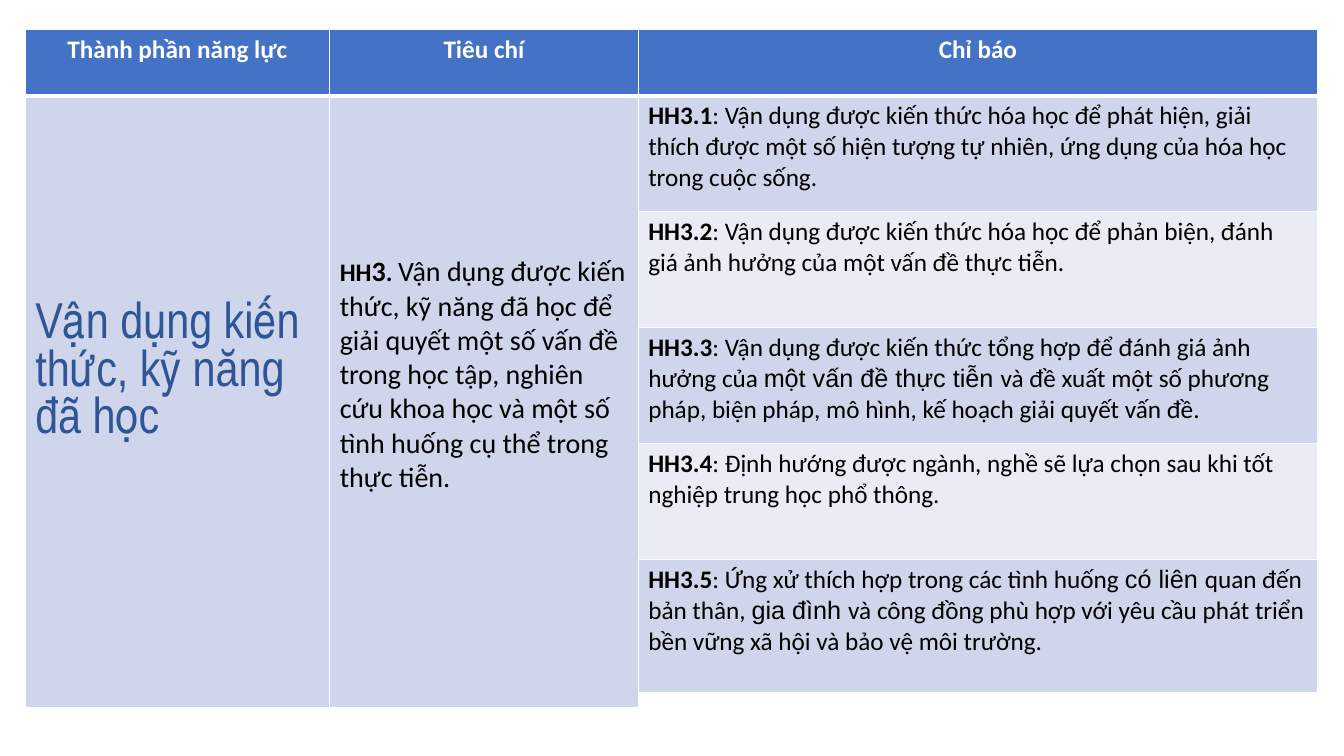
from lxml import etree
from pptx import Presentation
from pptx.dml.color import RGBColor
from pptx.enum import text as t
from pptx.oxml import ns
from pptx.util import Inches, Pt

WHITE, BLACK, BLUE = "FFFFFF", "000000", "4472C4"
BAND_DARK, BAND_LIGHT, DEEP_BLUE = "CFD5EA", "E9EBF5", "2F5597"
TOP, HEADER_HEIGHT, BODY_HEIGHT = 0.29, 0.66, 6.07
INDICATOR_HEIGHTS = [1.15] * 4 + [1.32]

INDICATORS = [
    ("HH3.1", [": Vận dụng được kiến thức hóa học để phát hiện, giải thích được một số "
               "hiện tượng tự nhiên, ứng dụng của hóa học trong cuộc sống."]),
    ("HH3.2", [": Vận dụng được kiến thức hóa học để phản biện, đánh giá ảnh hưởng của "
               "một vấn đề thực tiễn."]),
    ("HH3.3", [": Vận dụng được kiến thức tổng hợp để đánh giá ảnh hưởng của ",
               "một vấn đề thực tiễn ",
               "và đề xuất một số phương pháp, biện pháp, mô hình, kế hoạch giải quyết vấn đề."]),
    ("HH3.4", [": Định hướng được ngành, nghề sẽ lựa chọn sau khi tốt nghiệp trung học "
               "phổ thông."]),
    ("HH3.5", [": Ứng xử thích hợp trong các tình huống ", "có liên ",
               "quan đến bản thân, ", "gia đình ",
               "và công đồng phù hợp với yêu cầu phát triển bền vững xã hội và bảo vệ "
               "môi trường."]),
]


def color(value):
    return RGBColor.from_string(value)


def add_text(paragraph, content, size=18, font="Calibri", fill=BLACK, bold=False):
    run = paragraph.add_run()
    run.text = content
    run.font.size = Pt(size)
    run.font.name = font
    run.font.bold = bold
    run.font.color.rgb = color(fill)


def set_borders(cell, bottom):
    """Draw white cell edges, 1 pt wide except for the bottom one."""
    properties = cell._tc.get_or_add_tcPr()
    for index, (edge, width) in enumerate(
            [("lnL", 1), ("lnR", 1), ("lnT", 1), ("lnB", bottom)]):
        line = etree.Element(ns.qn(f"a:{edge}"), w=str(Pt(width)))
        fill = etree.SubElement(line, ns.qn("a:solidFill"))
        etree.SubElement(fill, ns.qn("a:srgbClr"), val=WHITE)
        properties.insert(index, line)


def format_cell(cell, fill, bottom=1, margin_top=0.05):
    """Style a cell and return its first paragraph."""
    cell.fill.solid()
    cell.fill.fore_color.rgb = color(fill)
    cell.margin_top = Inches(margin_top)
    set_borders(cell, bottom)
    return cell.text_frame.paragraphs[0]


def add_table(slide, left, widths, heights, headers):
    frame = slide.shapes.add_table(
        len(heights), len(widths), Inches(left), Inches(TOP),
        Inches(sum(widths)), Inches(sum(heights)))
    table = frame.table
    table.first_row = table.horz_banding = False
    for column, width in zip(table.columns, widths):
        column.width = Inches(width)
    for row, height in zip(table.rows, heights):
        row.height = Inches(height)
    for index, header in enumerate(headers):
        paragraph = format_cell(table.cell(0, index), BLUE, bottom=3)
        paragraph.alignment = t.PP_ALIGN.CENTER
        add_text(paragraph, header, fill=WHITE, bold=True)
    return table


def add_competence_table(slide):
    table = add_table(slide, 0.25, [3.02, 3.06], [HEADER_HEIGHT, BODY_HEIGHT],
                      ["Thành phần năng lực", "Tiêu chí"])
    component = format_cell(table.cell(1, 0), BAND_DARK, margin_top=2.05)
    add_text(component, "Vận dụng kiến thức, kỹ năng đã học",
             size=36, font="Arial Narrow", fill=DEEP_BLUE)
    criterion = format_cell(table.cell(1, 1), BAND_DARK, margin_top=1.58)
    for content, size in [("HH", 18), ("3", 20), (". ", 18)]:
        add_text(criterion, content, size=size, bold=True)
    add_text(criterion, "Vận dụng được kiến thức, kỹ năng đã học để giải quyết một số "
             "vấn đề trong học tập, nghiên cứu khoa học và một số tình huống cụ thể "
             "trong thực tiễn.", size=20)


def add_indicator_table(slide):
    table = add_table(slide, 6.33, [6.74], [HEADER_HEIGHT] + INDICATOR_HEIGHTS, ["Chỉ báo"])
    for row, (code, parts) in enumerate(INDICATORS, start=1):
        paragraph = format_cell(table.cell(row, 0), BAND_DARK if row % 2 else BAND_LIGHT)
        add_text(paragraph, code, bold=True)
        for index, part in enumerate(parts):
            add_text(paragraph, part, font="Arial" if index % 2 else "Calibri")


def main():
    presentation = Presentation()
    presentation.slide_width = Inches(13.33)
    presentation.slide_height = Inches(7.5)
    slide = presentation.slides.add_slide(presentation.slide_layouts[6])
    add_competence_table(slide)
    add_indicator_table(slide)
    presentation.save("out.pptx")


if __name__ == "__main__":
    main()
